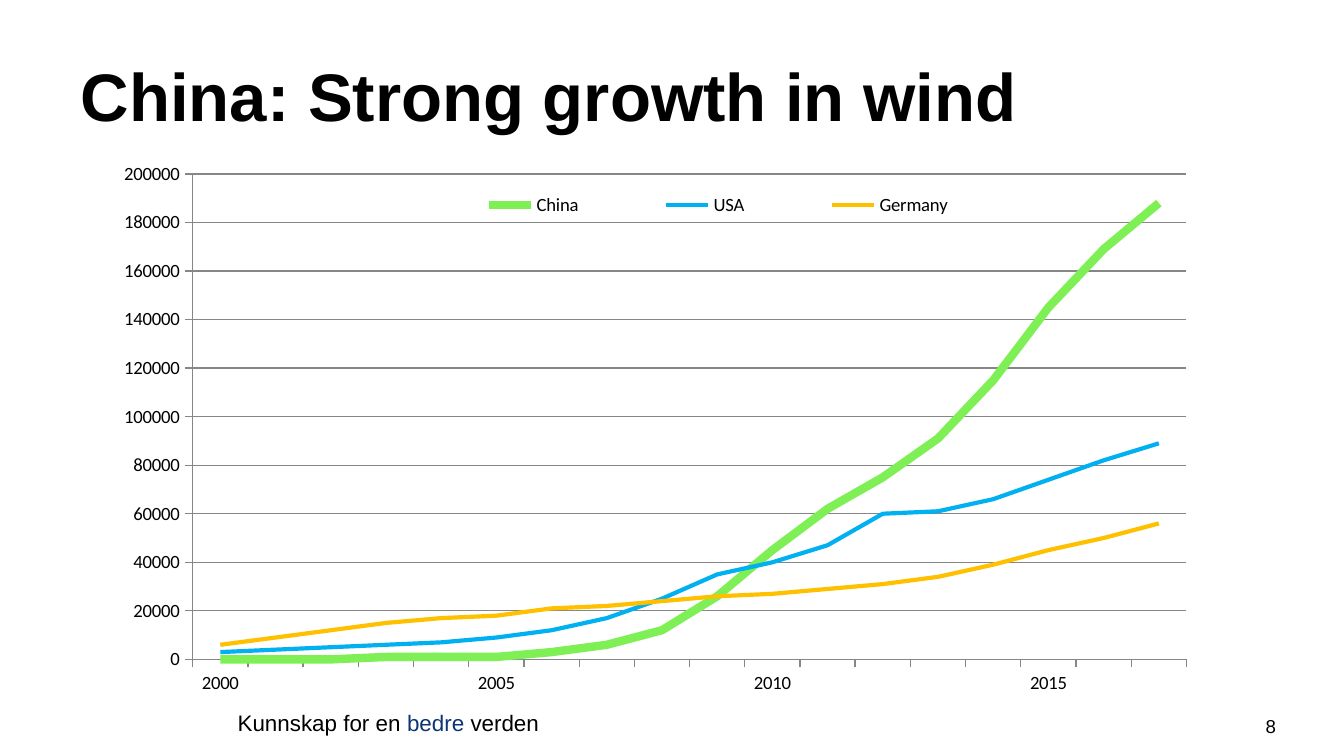
from lxml.etree import SubElement as Sub
from pptx import Presentation
from pptx.chart.data import CategoryChartData as Data
from pptx.dml.color import RGBColor
from pptx.enum.chart import XL_CHART_TYPE as Kind, XL_LEGEND_POSITION as Pos, XL_TICK_MARK as Tick
from pptx.enum.text import MSO_ANCHOR as Anchor, PP_ALIGN as Align
from pptx.oxml.ns import qn
from pptx.util import Inches, Pt

WIDE = Inches(10)
HIGH = WIDE * 9 // 16
YEARS = [str(y) if y % 5 == 0 else "" for y in range(2000, 2018)]
WIND = [
    ("China", "7EF056", 4.5, [0, 0, 0, 1, 1, 1, 3, 6, 12, 26, 45, 62, 75, 91, 115, 145, 169, 188]),
    ("USA", "00B0F0", 2.25, [3, 4, 5, 6, 7, 9, 12, 17, 25, 35, 40, 47, 60, 61, 66, 74, 82, 89]),
    ("Germany", "FFC000", 2.25, [6, 9, 12, 15, 17, 18, 21, 22, 24, 26, 27, 29, 31, 34, 39, 45, 50, 56]),
]


def tint(code):
    return RGBColor.from_string(code)


def share(x, y, w, h):
    return [int(side * part / 100) for side, part in zip((WIDE, HIGH, WIDE, HIGH), (x, y, w, h))]


def pin(node, spot, box, inner=False):
    for old in node.findall(qn("c:layout")):
        node.remove(old)
    frame = Sub(node, qn("c:layout"))
    node.insert(spot, frame)
    grid = Sub(frame, qn("c:manualLayout"))
    rules = [("layoutTarget", "inner")] if inner else []
    rules += [("xMode", "edge"), ("yMode", "edge")]
    rules += [(tag, part / 100) for tag, part in zip("xywh", box)]
    for tag, val in rules:
        Sub(grid, qn(f"c:{tag}"), val=str(val))


class Deck:
    font, plot = "Arial", "Calibri"
    ink, accent, rule = "000000", "0D3475", "868686"

    def __init__(self):
        self.file = Presentation()
        self.file.slide_width, self.file.slide_height = WIDE, HIGH
        self.slide = self.file.slides.add_slide(self.file.slide_layouts[5])

    def style(self, font, size, name=None):
        font.name, font.size = name or self.font, Pt(size)
        font.color.rgb = tint(self.ink)

    def title(self, text, box):
        head = self.slide.shapes.title
        head.left, head.top, head.width, head.height = share(*box)
        head.text_frame.vertical_anchor = Anchor.MIDDLE
        para = head.text_frame.paragraphs[0]
        para.text, para.alignment = text, Align.LEFT
        self.style(para.font, 36)
        para.font.bold = True

    def text(self, runs, box, size, align=Align.LEFT):
        frame = self.slide.shapes.add_textbox(*share(*box)).text_frame
        frame.word_wrap = True
        para = frame.paragraphs[0]
        para.alignment = align
        self.style(para.font, size)
        for words, code in runs:
            run = para.add_run()
            run.text = words
            run.font.color.rgb = tint(code)

    def axis(self, axis):
        axis.format.line.color.rgb = tint(self.rule)
        axis.major_tick_mark, axis.minor_tick_mark = Tick.OUTSIDE, Tick.NONE

    def chart(self, box, names, rows, top, step):
        data = Data(number_format="General")
        data.categories = names
        for name, _, _, vals in rows:
            data.add_series(name, [v * 1000 for v in vals])
        chart = self.slide.shapes.add_chart(Kind.LINE, *share(*box), data).chart
        self.style(chart.font, 10, self.plot)
        chart.has_title = False
        chart.plots[0].vary_by_categories = False
        for line, (_, code, width, _) in zip(chart.series, rows):
            line.smooth = False
            line.format.line.color.rgb = tint(code)
            line.format.line.width = Pt(width)
        self.axis(chart.category_axis)
        vals = chart.value_axis
        self.axis(vals)
        vals.minimum_scale, vals.maximum_scale, vals.major_unit = 0, top, step
        vals.major_gridlines.format.line.color.rgb = tint(self.rule)
        chart.has_legend = True
        chart.legend.position = Pos.RIGHT
        chart.legend.include_in_layout = True
        area = chart.element.find(".//" + qn("c:plotArea"))
        pin(area, 0, (10.7, 3.3, 84.7, 89.2), inner=True)
        pin(chart.element.find(".//" + qn("c:legend")), 1, (29, 6, 53, 6))


deck = Deck()
deck.title("China: Strong growth in wind", (5, 4.1, 90, 16.7))
deck.chart((5, 20.65, 87.3, 72), YEARS, WIND, 200000, 20000)
deck.text([("Kunnskap for en ", deck.ink), ("bedre ", deck.accent), ("verden", deck.ink)],
          (16.7, 93, 24.6, 5.3), 12)
deck.text([("8", deck.ink)], (92.7, 93.7, 3.7, 5.3), 10, Align.CENTER)
deck.file.save("out.pptx")
